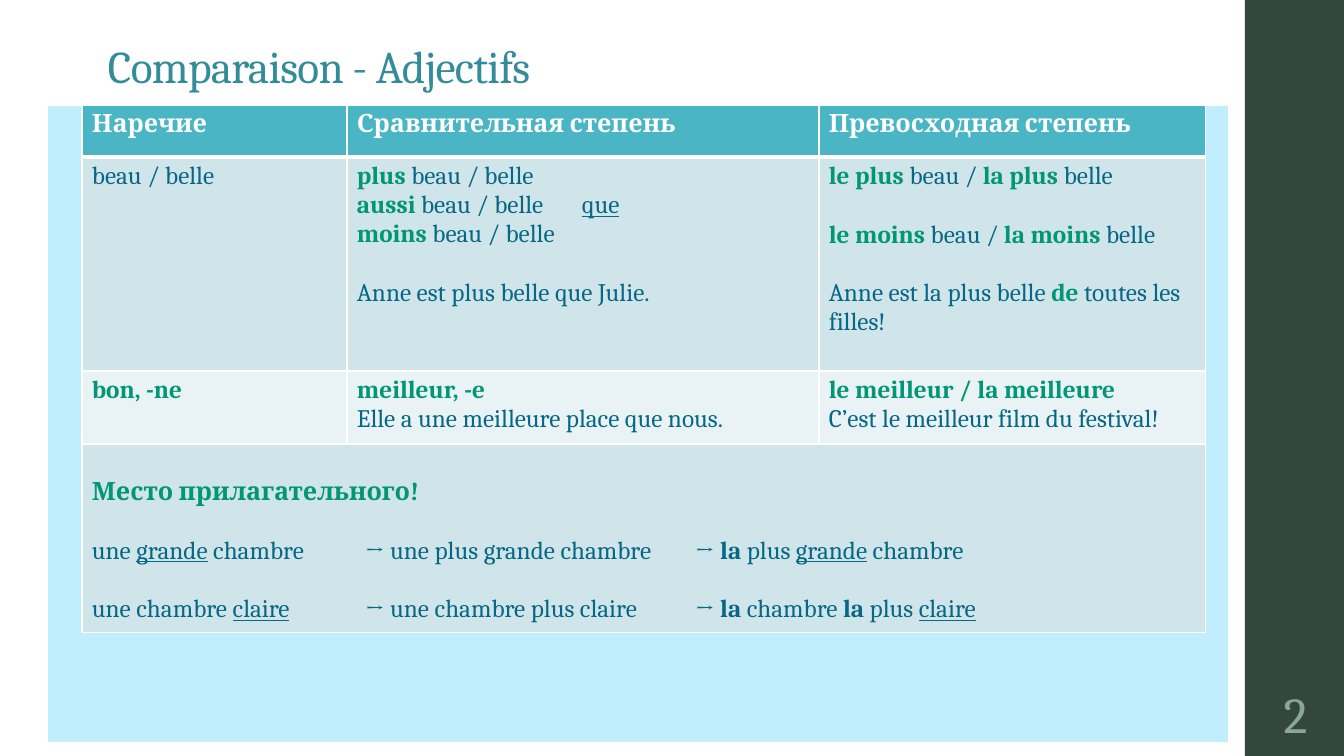
from lxml import etree
from pptx import Presentation
from pptx import util as u
from pptx.dml.color import RGBColor
from pptx.enum import shapes, text
from pptx.oxml.ns import qn

# Content: a cell is a list of lines; a line is (blank line before?, tab stops, runs)
COLORS = {"side": "34473D", "title": "328C99", "number": "87A896", "panel": "C1EEFC",
          "header": "4AB5C4", "band": "D0E5EA", "light": "E9F3F5", "white": "FFFFFF",
          "body": "076785", "key": "029676"}
# Run styles: colour, bold, underline
STYLES = {"head": ("white", True, False), "plain": ("body", False, False),
          "key": ("key", True, False), "under": ("body", False, True),
          "strong": ("body", True, False)}
TITLE = "Comparaison - Adjectifs"
NUMBER = "2"


def line(*runs, gap=False, tabs=()):
    return gap, tabs, runs


def plain(words, gap=False):
    return line((words, "plain"), gap=gap)


def key(words):
    return line((words, "key"))


def degree(word, tail="", **options):
    runs = [(word, "key"), (" beau / belle" + ("\t" if tail else ""), "plain")]
    return line(*runs, *([(tail, "under")] if tail else []), **options)


def superlative(word, gap=False):
    return line((f"le {word} ", "key"), ("beau / ", "plain"),
                (f"la {word} ", "key"), ("belle", "plain"), gap=gap)


ARROW_TABS = (273, 603)
ROWS = [  # height, fill, cells
    (52, "header", [[line((words, "head"))] for words in
                    ("Наречие", "Сравнительная степень", "Превосходная степень")]),
    (214, "band", [
        [plain("beau / belle")],
        [degree("plus"), degree("aussi", "que", tabs=(225,)), degree("moins"),
         plain("Anne est plus belle que Julie.", gap=True)],
        [superlative("plus"), superlative("moins", gap=True),
         line(("Anne est la plus belle ", "plain"), ("de", "key"),
              (" toutes les filles!", "plain"), gap=True)]]),
    (73, "light", [
        [key("bon, -ne")],
        [key("meilleur, -e"), plain("Elle a une meilleure place que nous.")],
        [key("le meilleur / la meilleure"), plain("C’est le meilleur film du festival!")]]),
    (185, "band", [[
        key("Место прилагательного!"),
        line(("une ", "plain"), ("grande", "under"),
             (" chambre\t→ une plus grande chambre\t→ ", "plain"), ("la", "strong"),
             (" plus ", "plain"), ("grande", "under"), (" chambre", "plain"),
             gap=True, tabs=ARROW_TABS),
        line(("une chambre ", "plain"), ("claire", "under"),
             ("\t→ une chambre plus claire\t→ ", "plain"), ("la", "strong"),
             (" chambre ", "plain"), ("la", "strong"), (" plus ", "plain"),
             ("claire", "under"), gap=True, tabs=ARROW_TABS)]]),
]

# Layout in px
PAGE = (1344, 756)
SIDEBAR = (1245, 0, 99, 756)
TITLE_BOX = (108, 36, 1000, 58)
NUMBER_BOX = (1245, 680, 101, 66)
PANEL = (47, 105, 1182, 639)
TABLE_AT = (82, 105)
COLUMNS = (265, 472, 387)
LAST_ROW_TOP = 34
BLANK_LINE = 21  # points


def px(length):
    return u.Emu(round(length * 914400 / 100.8))


def rgb(name):
    return RGBColor.from_string(COLORS[name])


def add_span(para, words, size, color, bold=False, underline=False):
    span = para.add_run()
    span.text = words
    font = span.font
    font.name, font.size, font.bold = "Cambria", u.Pt(size), bold
    font.underline = underline
    font.color.rgb = rgb(color)
    return span


def add_label(page, area, words, size, color, align):
    frame = page.shapes.add_textbox(*map(px, area)).text_frame
    frame.word_wrap = True
    frame.margin_left = frame.margin_right = frame.margin_top = frame.margin_bottom = 0
    frame.vertical_anchor = text.MSO_ANCHOR.MIDDLE
    para = frame.paragraphs[0]
    para.alignment = align
    return add_span(para, words, size, color)


def add_grid(page, left, top, columns, heights):
    grid = page.shapes.add_table(len(heights), len(columns), px(left), px(top),
                                 px(sum(columns)), px(sum(heights))).table
    grid.first_row = grid.horz_banding = False
    for column, width in zip(grid.columns, columns):
        column.width = px(width)
    for row, height in zip(grid.rows, heights):
        row.height = px(height)
    return grid


def paint_cell(cell, fill, top_width=1, bottom_width=1):
    cell.fill.solid()
    cell.fill.fore_color.rgb = rgb(fill)
    props = cell._tc.get_or_add_tcPr()
    edges = (("lnL", 1), ("lnR", 1), ("lnT", top_width), ("lnB", bottom_width))
    for place, (edge, width) in enumerate(edges):
        border = etree.Element(qn("a:" + edge), w=str(u.Pt(width)))
        paint = etree.SubElement(border, qn("a:solidFill"))
        etree.SubElement(paint, qn("a:srgbClr"), val=COLORS["white"])
        props.insert(place, border)


def write_cell(cell, lines):
    cell.margin_left = cell.margin_right = px(10)
    cell.margin_top = cell.margin_bottom = px(5)
    frame = cell.text_frame
    for place, (gap, tabs, runs) in enumerate(lines):
        para = frame.add_paragraph() if place else frame.paragraphs[0]
        para.space_before = u.Pt(BLANK_LINE if gap else 0)
        if tabs:
            stops = etree.SubElement(para._p.get_or_add_pPr(), qn("a:tabLst"))
            for stop in tabs:
                etree.SubElement(stops, qn("a:tab"), pos=str(px(stop)), algn="l")
        for words, style in runs:
            add_span(para, words, 18, *STYLES[style])


def main():
    deck = Presentation()
    deck.slide_width, deck.slide_height = map(px, PAGE)
    page = deck.slides.add_slide(deck.slide_layouts[6])

    # Sidebar and title
    sidebar = page.shapes.add_shape(shapes.MSO_SHAPE.RECTANGLE, *map(px, SIDEBAR))
    sidebar.shadow.inherit = False
    sidebar.fill.solid()
    sidebar.fill.fore_color.rgb = rgb("side")
    sidebar.line.fill.background()
    title = add_label(page, TITLE_BOX, TITLE, 32.4, "title", text.PP_ALIGN.LEFT)
    title.font._element.set("spc", "-50")

    # Panel behind the table, and page number
    left, top, width, height = PANEL
    panel = add_grid(page, left, top, [width], [height])
    paint_cell(panel.cell(0, 0), "panel", bottom_width=3)
    add_label(page, NUMBER_BOX, NUMBER, 36, "number", text.PP_ALIGN.CENTER)

    # Comparison table
    grid = add_grid(page, *TABLE_AT, COLUMNS, [height for height, _, _ in ROWS])
    last = len(ROWS) - 1
    grid.cell(last, 0).merge(grid.cell(last, len(COLUMNS) - 1))
    for r, (_, fill, cells) in enumerate(ROWS):
        for c in range(len(COLUMNS)):
            paint_cell(grid.cell(r, c), fill, 3 if r == 1 else 1, 3 if r == 0 else 1)
        for c, lines in enumerate(cells):
            write_cell(grid.cell(r, c), lines)
    grid.cell(last, 0).margin_top = px(LAST_ROW_TOP)

    deck.save("out.pptx")


if __name__ == "__main__":
    main()
